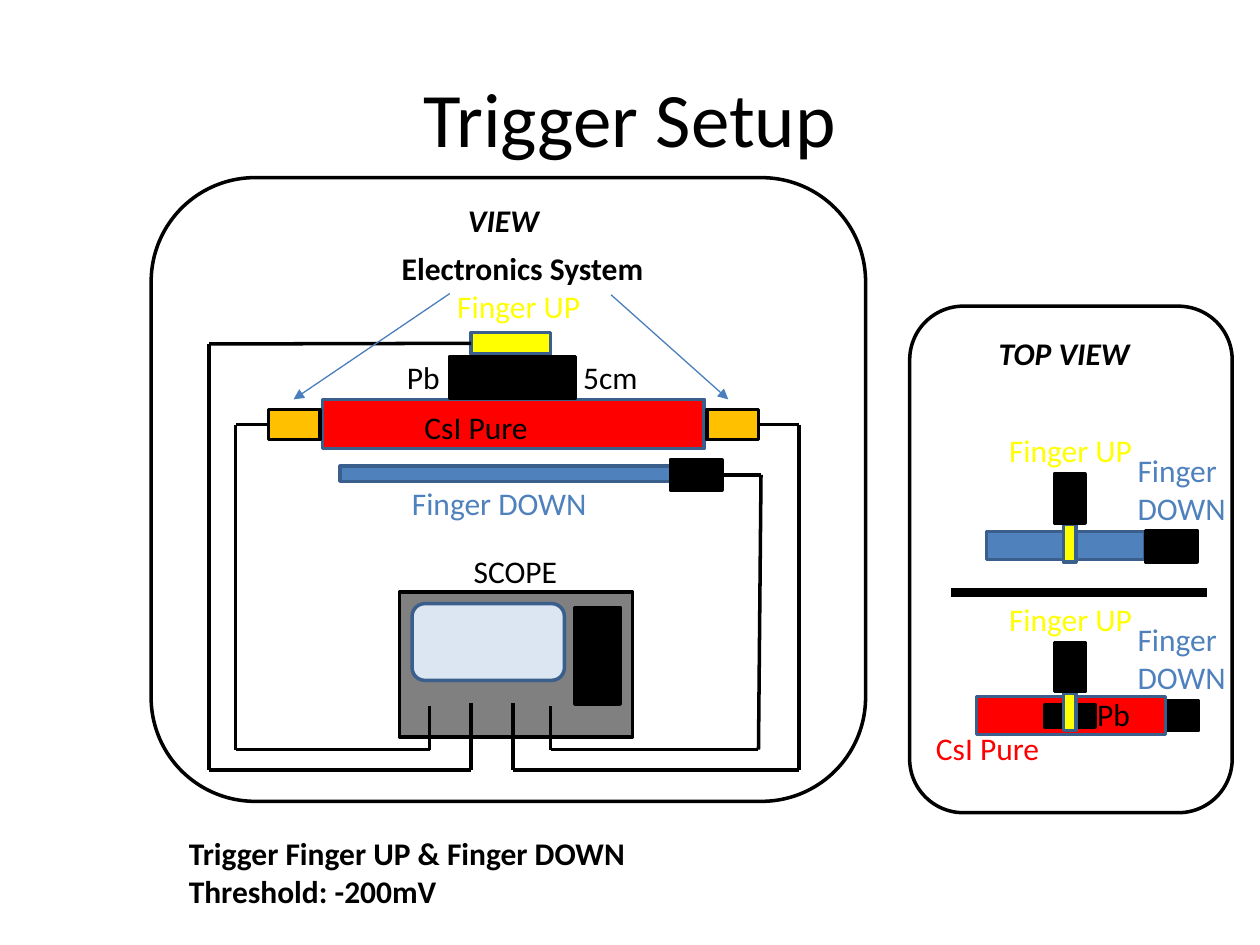
"""Build the Trigger Setup slide: side view with readout wiring, and top view."""
from dataclasses import dataclass
from itertools import pairwise

from lxml import etree
from pptx import Presentation, util as u
from pptx.dml.color import RGBColor
from pptx.enum import shapes, text
from pptx.oxml.ns import qn


@dataclass(frozen=True)
class Theme:
    font: str = "Calibri"
    title: int = 44
    body: int = 18
    black: str = "000000"
    white: str = "FFFFFF"
    blue: str = "4F81BD"
    edge: str = "3A5F8C"
    arrow: str = "4B7EBC"
    yellow: str = "FFFF00"
    red: str = "FF0000"
    orange: str = "FFC000"
    gray: str = "808080"
    screen: str = "DCE6F2"


T = Theme()
RECT = shapes.MSO_SHAPE.RECTANGLE
ROUND = shapes.MSO_SHAPE.ROUNDED_RECTANGLE
LEFT, CENTER = text.PP_ALIGN.LEFT, text.PP_ALIGN.CENTER

prs = Presentation()
prs.slide_width, prs.slide_height = u.Inches(10), u.Inches(7.5)
s = prs.slides.add_slide(prs.slide_layouts[6])


def box(x, y, w, h, fill, line=T.black, kind=RECT):
    sp = s.shapes.add_shape(kind, *map(u.Inches, (x, y, w, h)))
    sp.shadow.inherit = False
    sp.fill.solid()
    sp.fill.fore_color.rgb = RGBColor.from_string(fill)
    sp.line.color.rgb = RGBColor.from_string(line)
    sp.line.width = u.Pt(2)
    return sp


def label(x, y, w, h, words, color=T.black, size=T.body, align=LEFT,
          bold=False, italic=False, wrap=True):
    tf = s.shapes.add_textbox(*map(u.Inches, (x, y, w, h))).text_frame
    tf.word_wrap = wrap
    tf.text = words
    for p in tf.paragraphs:
        p.alignment = align
        for r in p.runs:
            r.font.name, r.font.size = T.font, u.Pt(size)
            r.font.bold, r.font.italic = bold, italic
            r.font.color.rgb = RGBColor.from_string(color)
    return tf


tf = label(0.5, 0.3, 9, 1.25, "Trigger Setup", size=T.title, align=CENTER)
tf.vertical_anchor = text.MSO_ANCHOR.MIDDLE

box(7.22, 2.43, 2.56, 4.02, T.white, kind=ROUND)
label(7.42, 2.6, 2.05, 0.4, "TOP VIEW", align=CENTER, bold=True, italic=True)
box(7.83, 4.22, 1.26, 0.22, T.blue, T.edge)
box(9.09, 4.21, 0.41, 0.25, T.black)
box(9.1, 5.56, 0.41, 0.24, T.black)
box(7.75, 5.53, 1.5, 0.3, T.red, T.edge)
box(8.29, 5.59, 0.4, 0.18, T.black)
for dy in (0, 1.34):
    box(8.44, 4.16 + dy, 0.1, 0.3, T.yellow, T.edge)
    box(8.37, 3.76 + dy, 0.24, 0.39, T.black)
    label(7.91, 3.37 + dy, 1.18, 0.4, "Finger UP", T.yellow)
    label(8.93, 3.53 + dy, 1, 0.71, "Finger DOWN", T.blue)
label(7.33, 5.74, 1.18, 0.4, "CsI Pure", T.red)
label(8.61, 5.47, 0.61, 0.4, "Pb")

box(1.2, 1.41, 5.67, 4.95, T.white, kind=ROUND)
label(2.97, 1.55, 2.05, 0.4, "VIEW", align=CENTER, bold=True, italic=True)
finger_up = box(3.74, 2.64, 0.63, 0.17, T.yellow, T.edge)
label(3.53, 2.23, 1.18, 0.4, "Finger UP", T.yellow)
box(2.56, 3.17, 3.03, 0.39, T.red, T.edge)
label(3.27, 3.19, 1.18, 0.4, "CsI Pure")
box(2.7, 3.7, 2.62, 0.12, T.blue, T.edge)
finger_down = box(5.32, 3.65, 0.41, 0.24, T.black)
right_end = box(5.61, 3.25, 0.41, 0.24, T.orange)
left_end = box(2.13, 3.25, 0.41, 0.24, T.orange)
label(3.17, 3.79, 1.68, 0.4, "Finger DOWN", T.blue)
box(3.57, 2.83, 1, 0.33, T.black)
label(3.13, 2.79, 0.61, 0.4, "Pb")
label(4.53, 2.79, 0.85, 0.4, "5cm")

box(3.17, 4.7, 1.85, 1.15, T.gray)
box(3.27, 4.79, 1.21, 0.61, T.screen, T.edge, ROUND)
box(4.56, 4.82, 0.36, 0.77, T.black)
label(3.25, 4.33, 1.68, 0.4, "SCOPE", align=CENTER)
label(3.09, 1.93, 2.13, 0.4, "Electronics System", bold=True, wrap=False)
label(1.4, 6.57, 3.69, 0.71,
      "Trigger Finger UP & Finger DOWN\nThreshold: -200mV", bold=True, wrap=False)

routes = [
    ([(3.74, 2.73), (1.66, 2.73), (1.66, 6.11), (3.74, 6.11), (3.74, 5.58)],
     T.black, 2, finger_up, 1),
    ([(2.13, 3.37), (1.87, 3.37), (1.87, 5.95), (3.41, 5.95), (3.41, 5.6)],
     T.black, 2, left_end, 1),
    ([(6.02, 3.37), (6.34, 3.37), (6.34, 6.11), (4.07, 6.11), (4.07, 5.58)],
     T.black, 2, right_end, 3),
    ([(5.73, 3.77), (6.04, 3.77), (6.02, 5.95), (4.37, 5.95), (4.37, 5.6)],
     T.black, 2, finger_down, 3),
    ([(7.55, 4.7), (9.58, 4.7)], T.black, 5, None, None),
    ([(3.57, 2.33), (2.33, 3.17)], T.arrow, 0.75, None, None),
    ([(4.85, 2.34), (5.78, 3.17)], T.arrow, 0.75, None, None),
]
for points, color, width, source, side in routes:
    for i, (start, end) in enumerate(pairwise(points)):
        c = s.shapes.add_connector(shapes.MSO_CONNECTOR.STRAIGHT,
                                   *map(u.Inches, start + end))
        c.line.color.rgb = RGBColor.from_string(color)
        c.line.width = u.Pt(width)
        if source is not None and i == 0:
            c.begin_connect(source, side)
        if color == T.arrow:
            etree.SubElement(c.line._get_or_add_ln(), qn("a:tailEnd"), type="triangle")
        etree.SubElement(c._element.spPr, qn("a:effectLst"))

prs.save("out.pptx")
